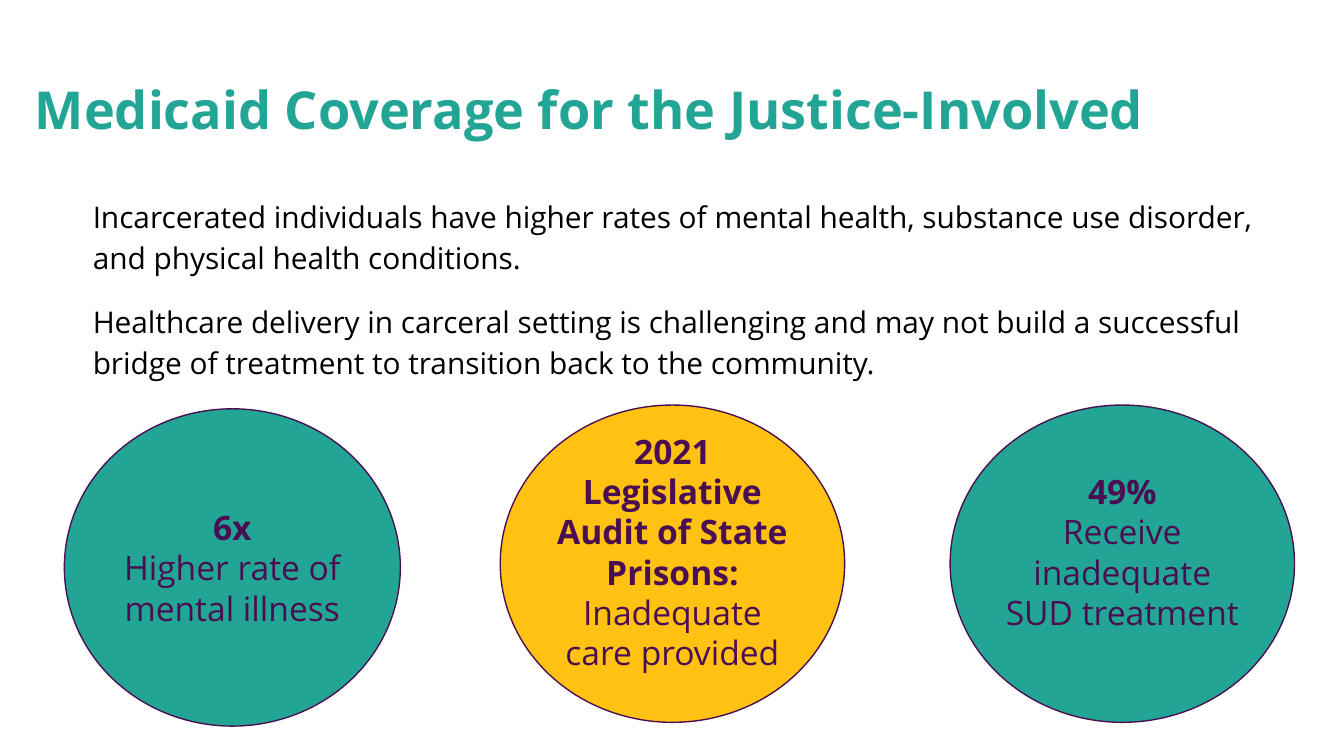
from pptx import Presentation
from pptx.dml.color import RGBColor
from pptx.enum.shapes import MSO_SHAPE as Shape
from pptx.enum.text import MSO_ANCHOR as Anchor, MSO_AUTO_SIZE as AutoSize, PP_ALIGN as Align
from pptx.oxml.ns import qn
from pptx.util import Pt

TEAL = RGBColor(0x23, 0xA5, 0x95)
YELLOW = RGBColor(0xFF, 0xC1, 0x12)
PURPLE = RGBColor(0x49, 0x0F, 0x52)
BLACK = RGBColor(0, 0, 0)
FONT = "Open Sans"

TITLE = "Medicaid Coverage for the Justice-Involved"
BODY = [
    "Incarcerated individuals have higher rates of mental health, substance use "
    "disorder, and physical health conditions.",
    "Healthcare delivery in carceral setting is challenging and may not build a "
    "successful bridge of treatment to transition back to the community.",
]
# left, top, width, height, fill, bottom inset, paragraphs of (text, bold) runs
CIRCLES = [
    (34.5, 219, 180, 170, TEAL, 0,
     [[("6x", True)], [("Higher rate of mental illness", False)]]),
    (268, 217, 184.5, 170, YELLOW, 13,
     [[("2021 Legislative Audit of State Prisons: ", True),
       ("Inadequate care provided", False)]]),
    (509, 217, 184.5, 170, TEAL, 13,
     [[("49%", True)], [("Receive inadequate SUD treatment", False)]]),
]


def apply(obj, **formats):
    for name, value in formats.items():
        setattr(obj, name, value)


def place(sp, left, top, width, height):
    apply(sp, left=Pt(left), top=Pt(top), width=Pt(width), height=Pt(height))


def set_frame(tf, anchor, inset, bottom):
    apply(tf, word_wrap=True, auto_size=AutoSize.NONE, vertical_anchor=anchor,
          margin_left=Pt(inset), margin_top=Pt(inset),
          margin_right=Pt(inset), margin_bottom=Pt(bottom))


def add_run(p, text, size, color, bold=False):
    r = p.add_run()
    r.text = text
    apply(r.font, name=FONT, size=Pt(size), bold=bold)
    r.font.color.rgb = color


def paragraphs(tf, count):
    """Return count paragraphs, the first being the one already there."""
    return [tf.paragraphs[0]] + [tf.add_paragraph() for _ in range(count - 1)]


def remove_bullet(p):
    pPr = p._p.get_or_add_pPr()
    pPr.set("marL", "0")
    pPr.set("indent", "0")
    pPr.append(pPr.makeelement(qn("a:buNone"), {}))


prs = Presentation()
apply(prs, slide_width=Pt(720), slide_height=Pt(405))
s = prs.slides.add_slide(prs.slide_layouts[1])

title = s.shapes.title
place(title, 11.5, 34, 676, 53)
set_frame(title.text_frame, Anchor.TOP, 7.2, 7.2)
p = title.text_frame.paragraphs[0]
p.alignment = Align.LEFT
add_run(p, TITLE, 28, TEAL, True)

body = s.placeholders[1]
place(body, 42.5, 96.5, 636, 116.5)
tf = body.text_frame
set_frame(tf, Anchor.TOP, 7.2, 7.2)
for i, (p, text) in enumerate(zip(paragraphs(tf, len(BODY)), BODY)):
    gap = Pt(12 if i else 0)
    apply(p, line_spacing=1.15, space_before=gap, space_after=gap)
    remove_bullet(p)
    add_run(p, text, 16, BLACK)

for *box, fill, bottom, content in CIRCLES:
    sp = s.shapes.add_shape(Shape.OVAL, *map(Pt, box))
    sp.shadow.inherit = False
    sp.fill.solid()
    sp.fill.fore_color.rgb = fill
    sp.line.color.rgb = PURPLE
    sp.line.width = Pt(0.75)
    tf = sp.text_frame
    set_frame(tf, Anchor.MIDDLE, 0, bottom)
    for p, runs in zip(paragraphs(tf, len(content)), content):
        p.alignment = Align.CENTER
        for text, bold in runs:
            add_run(p, text, 18, PURPLE, bold)

prs.save("out.pptx")
